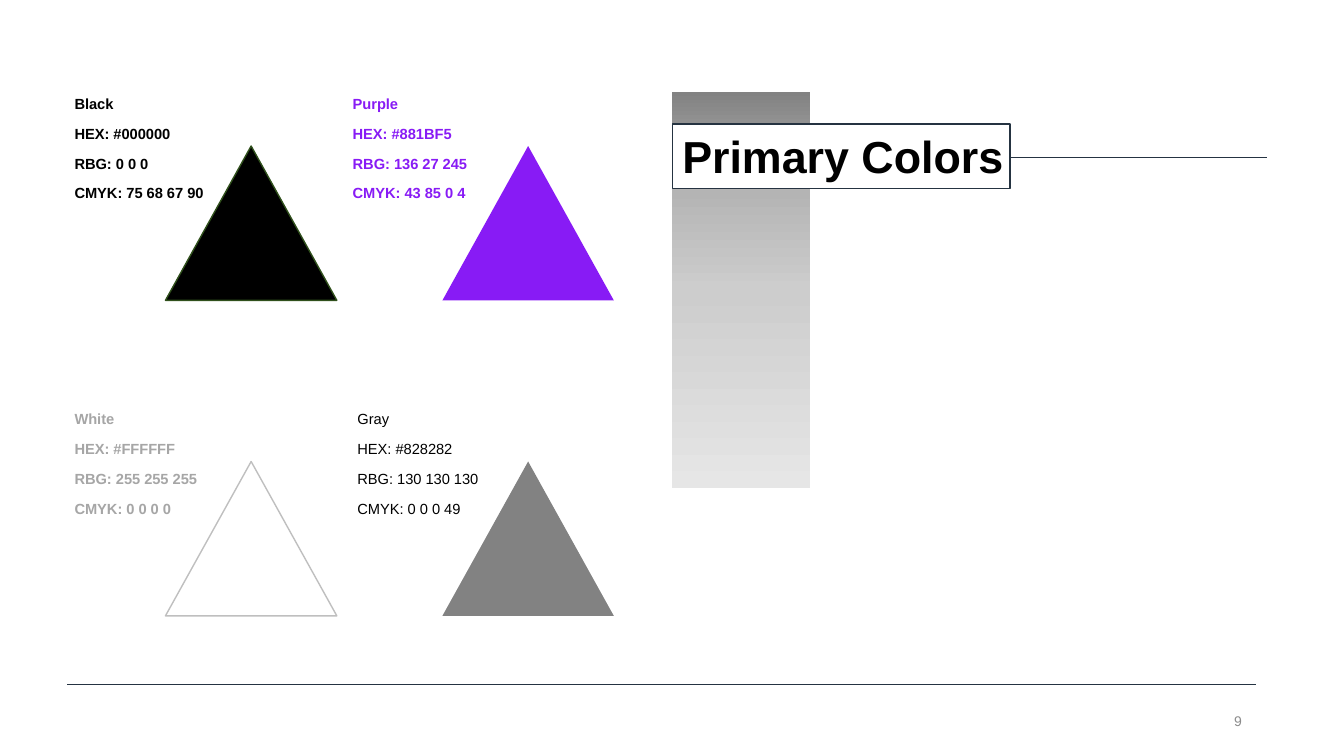
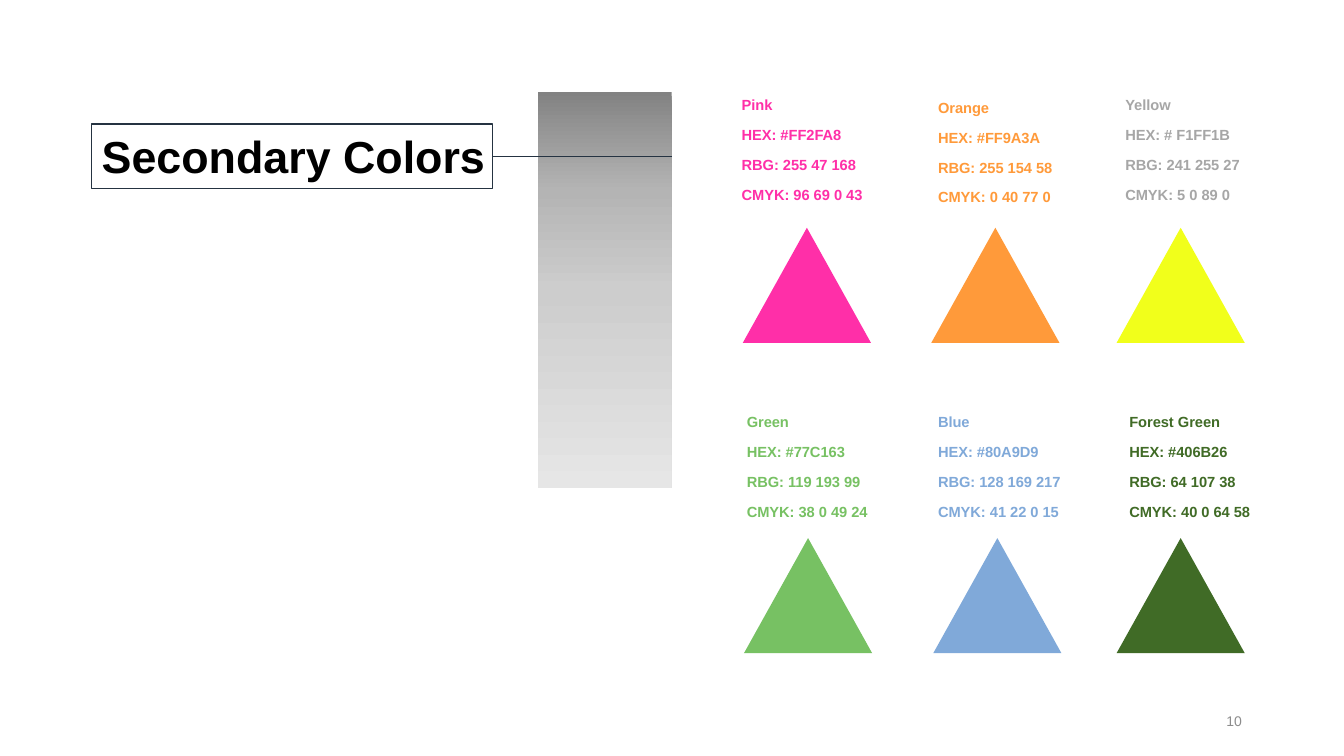
"""Build the two colour palette slides."""
from dataclasses import dataclass, field
from typing import Any

from lxml import etree
from pptx import Presentation
from pptx import util as u
from pptx.dml.color import RGBColor
from pptx.enum import shapes, text
from pptx.oxml.ns import qn

Pair = tuple[float, float]


@dataclass(frozen=True)
class Theme:
    font: str = "Arial"
    black: str = "000000"
    white: str = "FFFFFF"
    pale: str = "A6A6A6"
    quiet: str = "8C8C8C"
    frame: str = "253341"
    rule: str = "253342"
    fade: tuple[tuple[int, str], ...] = (
        (0, "828282"), (25, "B4B4B4"), (50, "CDCDCD"), (100, "E6E6E6"))
    head: float = 32
    body: float = 10.5
    foot: float = 10
    thin: float = 0.5
    edge: float = 1


@dataclass(frozen=True)
class Swatch:
    name: str
    fill: str
    cmyk: str
    ink: str = ""
    edge: str = ""
    bold: bool = True
    mark: str = "#"
    nudge: Pair = (0, 0)
    slip: float = 0


@dataclass(frozen=True)
class Grid:
    cols: int
    label: Pair
    label_step: Pair
    tri: Pair
    tri_step: Pair
    size: Pair


@dataclass(frozen=True)
class Page:
    title: str
    number: str
    bar: Pair
    box: Pair
    rules: tuple[tuple[float, float, float], ...]
    grid: Grid
    items: list[Swatch] = field(default_factory=list)


THEME = Theme()
TOP, BAR_TALL = 2.31, 9.98
BOX_TOP, BOX_TALL = 3.12, 1.63

PAGES = [
    Page("Primary Colors", "9", (16.94, 3.48), (16.94, 8.51),
         ((25.45, 31.93, 3.96), (1.7, 31.65, 17.25)),
         Grid(2, (1.63, 2.31), (7.01, 7.95), (4.17, 3.68), (6.98, 7.95), (4.32, 3.89)),
         [Swatch("Black", "000000", "75 68 67 90", edge="30501C"),
          Swatch("Purple", "881BF5", "43 85 0 4"),
          Swatch("White", "FFFFFF", "0 0 0 0", THEME.pale, "BFBFBF"),
          Swatch("Gray", "828282", "0 0 0 49", THEME.black, bold=False, nudge=(0.12, 0))]),
    Page("Secondary Colors", "10", (13.55, 3.38), (2.31, 10.11),
         ((12.42, 16.94, 3.94),),
         Grid(3, (18.57, 2.34), (4.82, 8), (18.72, 5.74), (4.71, 7.82), (3.23, 2.9)),
         [Swatch("Pink", "FF2FA8", "96 69 0 43", nudge=(-0.13, 0)),
          Swatch("Orange", "FF9A3A", "0 40 77 0", nudge=(0, 0.07), slip=0.04),
          Swatch("Yellow", "F1FF1B", "5 0 89 0", THEME.pale, mark="# ", nudge=(-0.1, 0)),
          Swatch("Green", "77C163", "38 0 49 24", slip=0.03),
          Swatch("Blue", "80A9D9", "41 22 0 15", slip=0.09),
          Swatch("Forest Green", "406B26", "40 0 64 58")]),
]


def apply(target: Any, values: dict[str, Any]) -> None:
    for key, value in values.items():
        setattr(target, key, value)


def cells(*sizes: float) -> list[u.Length]:
    return [u.Cm(size) for size in sizes]


def paint(shape: Any, fill: str, edge: str = "") -> None:
    shape.fill.solid()
    shape.fill.fore_color.rgb = RGBColor.from_string(fill)
    if edge:
        shape.line.color.rgb = RGBColor.from_string(edge)
        shape.line.width = u.Pt(THEME.edge)
    else:
        shape.line.fill.background()


def write(frame: Any, lines: list[str], size: float, ink: str,
          bold: bool = False, para: dict[str, Any] | None = None) -> None:
    apply(frame, {"word_wrap": True, "auto_size": text.MSO_AUTO_SIZE.NONE})
    for index, line in enumerate(lines):
        part = frame.add_paragraph() if index else frame.paragraphs[0]
        apply(part, para or {})
        run = part.add_run()
        run.text = line
        apply(run.font, {"name": THEME.font, "size": u.Pt(size), "bold": bold})
        run.font.color.rgb = RGBColor.from_string(ink)


def add_bar(slide: Any, left: float, width: float) -> Any:
    bar = slide.shapes.add_shape(shapes.MSO_SHAPE.RECTANGLE,
                                 *cells(left, TOP, width, BAR_TALL))
    bar.shadow.inherit = False
    bar.line.fill.background()
    bar.fill.gradient()
    bar.fill.gradient_angle = 270
    stops = next(bar.element.iter(qn("a:gsLst")))
    for stop in list(stops):
        stops.remove(stop)
    for place, tone in THEME.fade:
        stop = etree.SubElement(stops, qn("a:gs"), pos=str(place * 1000))
        etree.SubElement(stop, qn("a:srgbClr"), val=tone)
    return bar


def add_title(slide: Any, page: Page, bar: Any) -> None:
    title = slide.shapes.title
    left, width = page.box
    names = ("left", "top", "width", "height")
    apply(title, dict(zip(names, cells(left, BOX_TOP, width, BOX_TALL))))
    paint(title, THEME.white, THEME.frame)
    apply(title.text_frame, {"margin_right": 0,
                             "vertical_anchor": text.MSO_ANCHOR.TOP})
    write(title.text_frame, [page.title], THEME.head, THEME.black, True,
          {"alignment": text.PP_ALIGN.LEFT})
    bar.element.addnext(title.element)


def add_rule(slide: Any, start: float, end: float, top: float) -> None:
    rule = slide.shapes.add_connector(shapes.MSO_CONNECTOR.STRAIGHT,
                                      *cells(start, top, end, top))
    rule.line.color.rgb = RGBColor.from_string(THEME.rule)
    rule.line.width = u.Pt(THEME.thin)
    etree.SubElement(rule.element.spPr, qn("a:effectLst"))


def add_swatch(slide: Any, item: Swatch, grid: Grid, index: int) -> None:
    row, col = divmod(index, grid.cols)
    left = grid.tri[0] + col * grid.tri_step[0] + item.slip
    top = grid.tri[1] + row * grid.tri_step[1]
    tri = slide.shapes.add_shape(shapes.MSO_SHAPE.ISOSCELES_TRIANGLE,
                                 *cells(left, top, *grid.size))
    tri.shadow.inherit = False
    paint(tri, item.fill, item.edge)

    left = grid.label[0] + col * grid.label_step[0] + item.nudge[0]
    top = grid.label[1] + row * grid.label_step[1] + item.nudge[1]
    label = slide.shapes.add_textbox(*cells(left, top, 4.88, 6.22))
    tones = " ".join(str(tone) for tone in RGBColor.from_string(item.fill))
    lines = [item.name, f"HEX: {item.mark}{item.fill}",
             f"RBG: {tones}", f"CMYK: {item.cmyk}"]
    write(label.text_frame, lines, THEME.body, item.ink or item.fill, item.bold,
          {"line_spacing": 0.9, "space_before": u.Pt(10)})


def add_number(slide: Any, number: str) -> None:
    box = slide.shapes.add_textbox(*cells(23.93, 17.65, 7.62, 1.02))
    box.text_frame.vertical_anchor = text.MSO_ANCHOR.MIDDLE
    write(box.text_frame, [number], THEME.foot, THEME.quiet,
          para={"alignment": text.PP_ALIGN.RIGHT})


def add_page(deck: Any, page: Page) -> None:
    slide = deck.slides.add_slide(deck.slide_layouts.get_by_name("Title Only"))
    bar = add_bar(slide, *page.bar)
    add_title(slide, page, bar)
    for rule in page.rules:
        add_rule(slide, *rule)
    for index, item in enumerate(page.items):
        add_swatch(slide, item, page.grid, index)
    add_number(slide, page.number)


def main() -> None:
    deck = Presentation()
    apply(deck, {"slide_width": u.Cm(33.87), "slide_height": u.Cm(19.05)})
    for page in PAGES:
        add_page(deck, page)
    deck.save("out.pptx")


if __name__ == "__main__":
    main()
